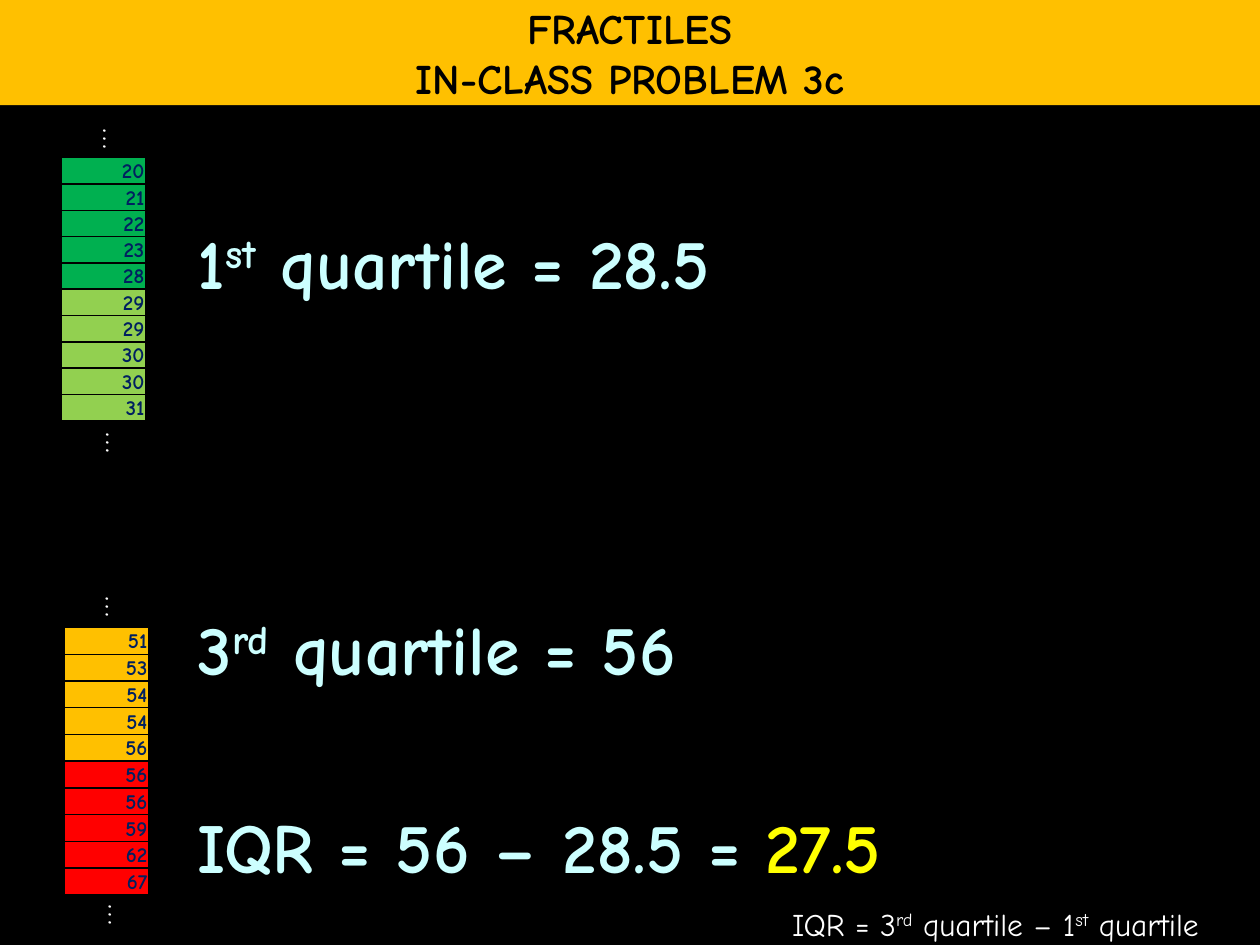
from lxml.etree import SubElement
from pptx import Presentation
from pptx.dml.color import RGBColor
from pptx.enum.text import MSO_ANCHOR as Anchor, MSO_AUTO_SIZE as AutoSize, PP_ALIGN as Align
from pptx.oxml import parse_xml
from pptx.oxml.ns import nsdecls, qn
from pptx.util import Cm, Pt

FONT = "Comic Neue"
BLACK, WHITE, NAVY = "000000", "FFFFFF", "002060"
AMBER, PALE_CYAN, YELLOW = "FFC000", "CCFFFF", "FFFF00"
GREEN, LIME, RED = "00B050", "92D050", "FF0000"


def color(hex_code):
    return RGBColor.from_string(hex_code)


def style(span, size, hex_code, bold=False, raised=False):
    span.font.name = FONT
    span.font.size = Pt(size)
    span.font.bold = bold
    span.font.color.rgb = color(hex_code)
    if raised:
        span._r.get_or_add_rPr().set("baseline", "30000")


def add_spans(para, parts, size, hex_code, bold=False):
    """Parts are plain strings, or (text, changes) pairs."""
    for part in parts:
        text, changes = (part, {}) if isinstance(part, str) else part
        span = para.add_run()
        span.text = text
        style(span, **{"size": size, "hex_code": hex_code, "bold": bold, **changes})


def raised(text):
    return text, {"raised": True}


def place(shape, box):
    shape.left, shape.top, shape.width, shape.height = (Cm(n) for n in box)


def fill_banner(title, box, lines):
    place(title, box)
    title.fill.solid()
    title.fill.fore_color.rgb = color(AMBER)
    frame = title.text_frame
    frame.text = "\n".join(lines)
    frame.word_wrap = False
    frame.auto_size = AutoSize.NONE
    frame.vertical_anchor = Anchor.MIDDLE
    for para in frame.paragraphs:
        para.alignment = Align.CENTER
        style(para.runs[0], 24, BLACK, bold=True)


def fill_results(body, box, results):
    """Each result is (space before in points, parts)."""
    place(body, box)
    frame = body.text_frame
    frame.auto_size = AutoSize.NONE
    frame.vertical_anchor = Anchor.TOP
    frame.margin_top = Cm(2.09)
    for index, (gap, parts) in enumerate(results):
        para = frame.add_paragraph() if index else frame.paragraphs[0]
        para.space_before = Pt(gap)
        properties = para._p.get_or_add_pPr()
        properties.set("marL", "0")
        properties.set("indent", "0")
        SubElement(properties, qn("a:buNone"))
        add_spans(para, parts, 40, PALE_CYAN, bold=True)


def border_cell(cell):
    properties = cell._tc.get_or_add_tcPr()
    for index, side in enumerate(("lnL", "lnR", "lnT", "lnB")):
        properties.insert(index, parse_xml(
            f'<a:{side} {nsdecls("a")} w="12700"><a:solidFill>'
            f'<a:srgbClr val="{BLACK}"/></a:solidFill></a:{side}>'))


def add_ellipsis(page, center_x, center_y, rotation):
    width, height = 1.47, 1.02
    box = page.shapes.add_textbox(Cm(center_x - width / 2), Cm(center_y - height / 2),
                                  Cm(width), Cm(height))
    box.rotation = rotation
    box.text_frame.word_wrap = True
    add_spans(box.text_frame.paragraphs[0], ["…"], 18, WHITE)


def add_data_column(page, box, values, upper_fill, lower_fill, dots_above, dots_below):
    """Sorted values, split by colour halfway; dots are (x, y) offsets from the box."""
    left, top, width, height = box
    table = page.shapes.add_table(len(values), 1, *(Cm(n) for n in box)).table
    table.first_row = table.horz_banding = False
    for index, value in enumerate(values):
        table.rows[index].height = Cm(height / len(values))
        cell = table.cell(index, 0)
        cell.fill.solid()
        cell.fill.fore_color.rgb = color(upper_fill if index < len(values) / 2 else lower_fill)
        cell.margin_left = cell.margin_right = cell.margin_top = Cm(0.03)
        cell.margin_bottom = 0
        cell.vertical_anchor = Anchor.BOTTOM
        border_cell(cell)
        para = cell.text_frame.paragraphs[0]
        para.alignment = Align.RIGHT
        add_spans(para, [str(value)], 12, NAVY, bold=True)
    for (x, y), rotation in ((dots_above, 270), (dots_below, 90)):
        add_ellipsis(page, left + x, top + y, rotation)


def add_formula(page, box, parts):
    note = page.shapes.add_textbox(*(Cm(n) for n in box))
    note.text_frame.word_wrap = True
    add_spans(note.text_frame.paragraphs[0], parts, 18, WHITE)


def main():
    deck = Presentation()
    deck.slide_width, deck.slide_height = Cm(25.4), Cm(19.05)
    page = deck.slides.add_slide(deck.slide_layouts[1])
    page.background.fill.solid()
    page.background.fill.fore_color.rgb = color(BLACK)

    # Title banner
    fill_banner(page.shapes.title, (0, 0, 25.4, 2.12),
                ["FRACTILES", "IN-CLASS PROBLEM 3c"])

    # Quartiles and interquartile range
    fill_results(page.placeholders[1], (3.73, 2.34, 20.4, 15.67), [
        (0, ["1", raised("st"), " quartile = 28.5"]),
        (172.5, ["3", raised("rd"), " quartile = 56"]),
        (65, ["IQR = 56 – 28.5 = ", ("27.5", {"hex_code": YELLOW})]),
    ])

    # Data around each quartile
    add_data_column(page, (1.24, 3.18, 1.7, 5.3), [20, 21, 22, 23, 28, 29, 29, 30, 30, 31],
                    GREEN, LIME, (0.64, -0.66), (1.15, 6.02))
    add_data_column(page, (1.3, 12.65, 1.7, 5.13), [51, 53, 54, 54, 56, 56, 56, 59, 62, 67],
                    AMBER, RED, (0.63, -0.69), (1.14, 6.07))

    # Formula
    add_formula(page, (15.72, 18.11, 9.73, 1.02),
                ["IQR = 3", raised("rd"), " quartile – 1", raised("st"), " quartile"])

    deck.save("out.pptx")


if __name__ == "__main__":
    main()
